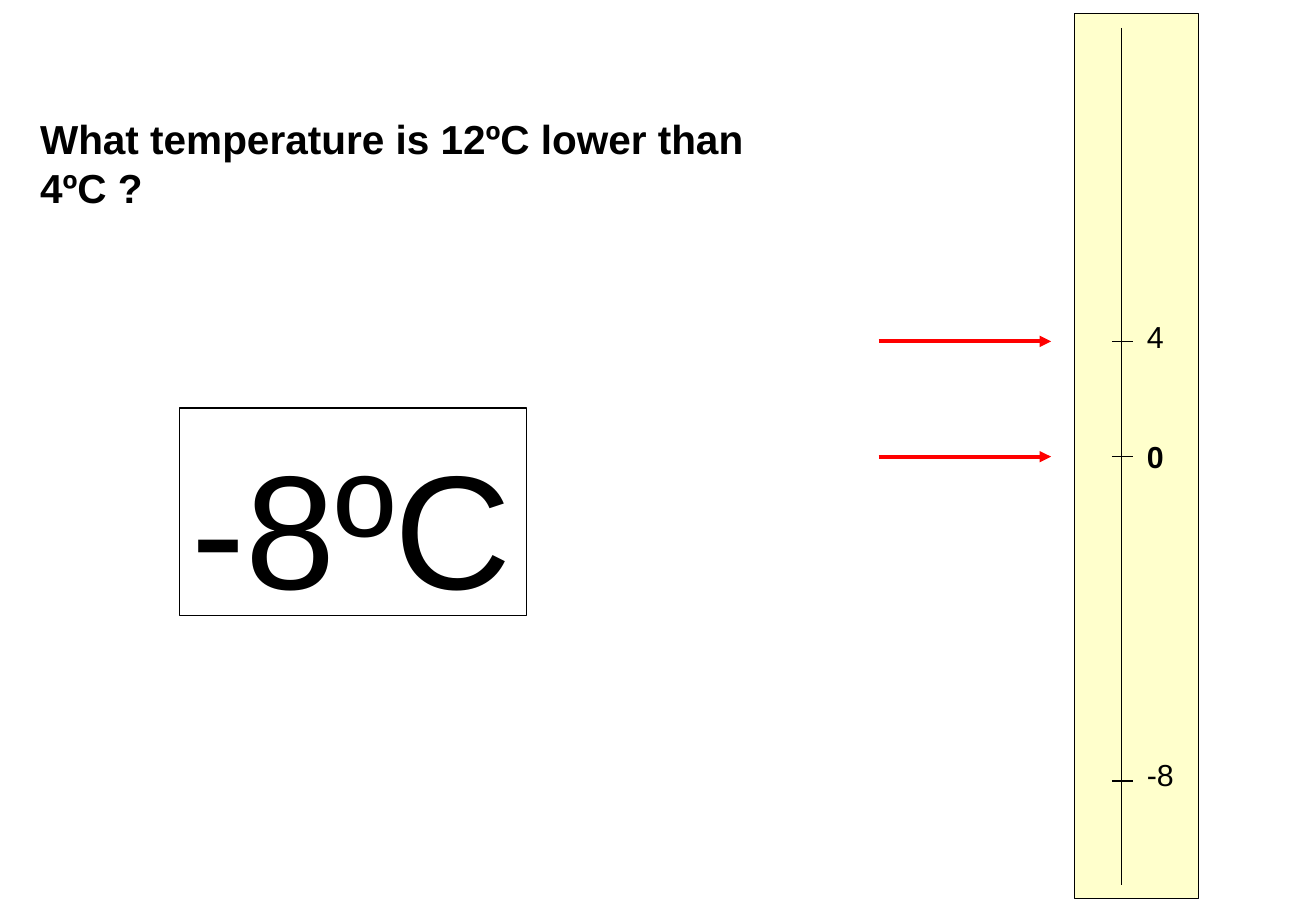
from lxml.etree import SubElement
from pptx import Presentation
from pptx.dml.color import RGBColor
from pptx.enum.shapes import MSO_CONNECTOR as Connector, MSO_SHAPE as Shape
from pptx.enum.text import MSO_ANCHOR as Anchor, MSO_AUTO_SIZE as AutoSize, PP_ALIGN as Align
from pptx.oxml.ns import qn
from pptx.util import Inches, Pt

BLACK = RGBColor(0x00, 0x00, 0x00)
RED = RGBColor(0xFF, 0x00, 0x00)
CREAM = RGBColor(0xFF, 0xFF, 0xCC)

# The slide is a grid of 100 columns by 100 rows
WIDTH, HEIGHT = Inches(10.83), Inches(7.5)
SCALE_COLUMN = 85.23
TICK_COLUMNS = (84.49, 86.06)
ARROW_COLUMNS = (66.76, 79.87)
LABEL_COLUMN = 86.24

# Label, tick row, label row, label width, is zero, has an arrow
MARKS = [
    ("4", 37.47, 34.27, 3.14, False, True),
    ("0", 50.13, 47.47, 3.14, True, True),
    ("-8", 85.73, 82.4, 3.88, False, False),
]


def columns(count):
    return round(WIDTH * count / 100)


def rows(count):
    return round(HEIGHT * count / 100)


def area(left, top, width, height):
    return columns(left), rows(top), columns(width), rows(height)


def write(box, text, size, bold=False):
    frame = box.text_frame
    frame.text = text
    frame.word_wrap = False
    frame.auto_size = AutoSize.NONE
    frame.vertical_anchor = Anchor.TOP
    para = frame.paragraphs[0]
    para.alignment = Align.LEFT
    para.line_spacing = 1.0
    para.space_before = Pt(0)
    font = para.font
    font.name, font.size, font.bold = "Arial", Pt(size), bold
    font.color.rgb = BLACK


def add_title(page, text):
    title = page.shapes.title
    title.left, title.top, title.width, title.height = area(2.12, 11.87, 63.9, 6.67)
    write(title, text, 24, bold=True)


def add_panel(page, place, fill=None):
    panel = page.shapes.add_shape(Shape.RECTANGLE, *place)
    panel.shadow.inherit = False
    if fill is None:
        panel.fill.background()
    else:
        panel.fill.solid()
        panel.fill.fore_color.rgb = fill
    panel.line.color.rgb = BLACK
    panel.line.width = Pt(0.75)
    return panel


def add_line(page, start, end, color=BLACK, weight=0.75, arrow=False):
    line = page.shapes.add_connector(
        Connector.STRAIGHT, columns(start[0]), rows(start[1]), columns(end[0]), rows(end[1]))
    line.line.color.rgb = color
    line.line.width = Pt(weight)
    if arrow:
        SubElement(line.line._get_or_add_ln(), qn("a:tailEnd"), type="triangle")
    SubElement(line._element.spPr, qn("a:effectLst"))


def add_mark(page, label, tick_row, label_row, width, is_zero, has_arrow):
    left, right = TICK_COLUMNS
    add_line(page, (left, tick_row), (right, tick_row))
    box = page.shapes.add_textbox(*area(LABEL_COLUMN, label_row, width, 5.33))
    write(box, label, 18, bold=is_zero)
    if has_arrow:
        tail, head = ARROW_COLUMNS
        add_line(page, (tail, tick_row), (head, tick_row), RED, 2.25, arrow=True)


def add_answer(page, text):
    answer = add_panel(page, area(13.67, 44.8, 26.32, 22.8))
    write(answer, text, 96)
    answer.text_frame.margin_top = rows(2.1)
    answer.text_frame.margin_bottom = 0


def main():
    deck = Presentation()
    deck.slide_width, deck.slide_height = WIDTH, HEIGHT
    page = deck.slides.add_slide(deck.slide_layouts[5])

    # Question
    add_title(page, "What temperature is 12ºC lower than 4ºC ?")

    # Thermometer
    add_panel(page, area(81.63, 1.47, 9.42, 97.2), CREAM)
    add_line(page, (SCALE_COLUMN, 3.07), (SCALE_COLUMN, 97.2))
    for mark in MARKS:
        add_mark(page, *mark)

    # Answer
    add_answer(page, "-8ºC")

    deck.save("out.pptx")


if __name__ == "__main__":
    main()
